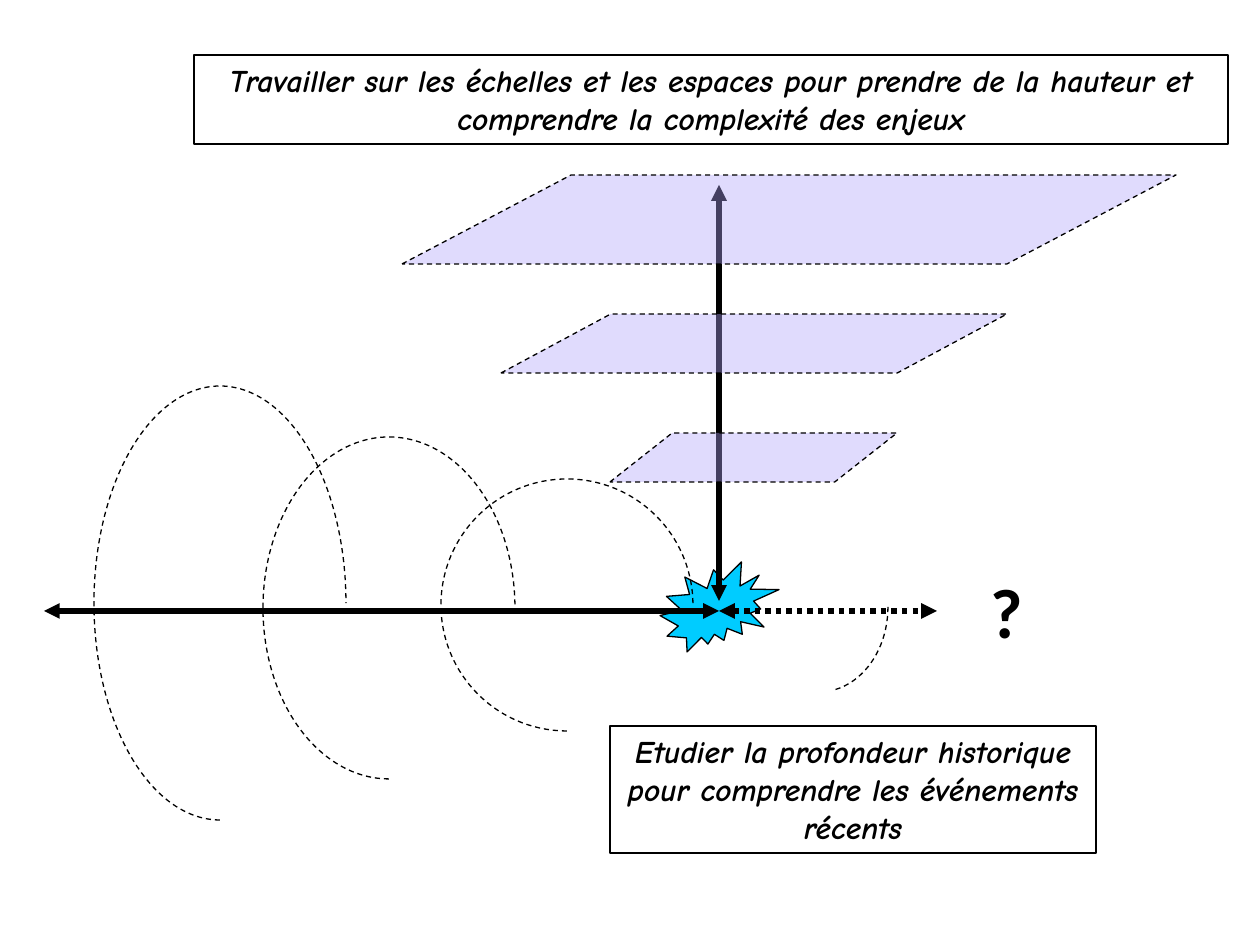
from math import atan2, cos, degrees, radians, sin

from lxml.etree import SubElement
from pptx import Presentation
from pptx.dml.color import RGBColor
from pptx.enum.dml import MSO_LINE_DASH_STYLE as Dash
from pptx.enum.shapes import MSO_CONNECTOR as Connector, MSO_SHAPE as Shape
from pptx.enum.text import MSO_AUTO_SIZE as AutoSize, PP_ALIGN as Align
from pptx.oxml.ns import qn
from pptx.util import Pt

EMU_PER_PX = 914400 / 126
COLORS = {"ink": "000000", "plane": "B0A4FA", "burst": "00CCFF"}
CAPTION_FONT = {"name": "Comic Neue", "size": Pt(18), "bold": True, "italic": True}
MARK_FONT = {"name": "Calibri", "size": Pt(40), "bold": True}


def px(*lengths):
    return [round(length * EMU_PER_PX) for length in lengths]


def color(name):
    return RGBColor.from_string(COLORS[name])


def style_line(line, width=0.75, dash=None):
    line.color.rgb = color("ink")
    line.width = Pt(width)
    if dash is not None:
        line.dash_style = dash


def add_outline(slide, kind, box, fill=None, alpha=None, dash=None, adjustments=()):
    shape = slide.shapes.add_shape(kind, *px(*box))
    shape.shadow.inherit = False
    style_line(shape.line, dash=dash)
    for index, value in enumerate(adjustments):
        shape.adjustments[index] = value
    if fill is None:
        shape.fill.background()
    else:
        shape.fill.solid()
        shape.fill.fore_color.rgb = color(fill)
    if alpha is not None:
        fill_color = shape._element.spPr.find(qn("a:solidFill"))[0]
        SubElement(fill_color, qn("a:alpha"), val=str(alpha * 1000))
    return shape


def add_arrow(slide, start, end, dash=None):
    arrow = slide.shapes.add_connector(Connector.STRAIGHT, *px(*start, *end))
    style_line(arrow.line, 3, dash)
    line = arrow.line._get_or_add_ln()
    for tag in ("a:headEnd", "a:tailEnd"):
        SubElement(line, qn(tag), type="triangle")
    SubElement(arrow._element.spPr, qn("a:effectLst"))


def add_text(slide, box, text, font, align=Align.LEFT, framed=False):
    text_box = slide.shapes.add_textbox(*px(*box))
    if framed:
        style_line(text_box.line)
    frame = text_box.text_frame
    frame.word_wrap = True
    frame.auto_size = AutoSize.SHAPE_TO_FIT_TEXT
    paragraph = frame.paragraphs[0]
    paragraph.alignment = align
    run = paragraph.add_run()
    run.text = text
    run.font.color.rgb = color("ink")
    for name, value in font.items():
        setattr(run.font, name, value)


def add_arc(slide, center, radii, start, end):
    """Angles run clockwise along the circle that is stretched to the radii."""
    (x, y), (rx, ry) = center, radii
    adjustments = []
    for angle in (start, end):
        turn = radians(angle)
        seen = degrees(atan2(ry * sin(turn), rx * cos(turn)))
        adjustments.append(seen * 0.6)  # 60000 units a degree, over 100000
    box = (x - rx, y - ry, 2 * rx, 2 * ry)
    add_outline(slide, Shape.ARC, box, dash=Dash.DASH, adjustments=adjustments)


def build_time_axis(slide, box):
    left, top, width, height = box
    axis_y = top + 218
    event_x = left + 675

    # Present event and the arrows to future and past
    add_outline(slide, Shape.EXPLOSION2, (event_x - 59, axis_y - 49, 119, 90), "burst")
    add_arrow(slide, (event_x, axis_y), (left + width, axis_y), Dash.ROUND_DOT)
    add_arrow(slide, (left, axis_y), (event_x, axis_y))

    # Waves of the past, wider with distance
    for x, y, ry in ((523, 212, 126), (345, 215, 171), (176, 210, 217)):
        add_arc(slide, (left + x, top + y), (126, ry), 90, 256.5)

    # Wave of the uncertain future
    add_arc(slide, (left + 775, top + 214), (69, 85), 270, 76.5)
    add_text(slide, (left + 934, top + 169, 49, 97), "?", MARK_FONT)


def build_scale_axis(slide, box):
    left, top, width, height = box
    axis_x = left + 317
    add_arrow(slide, (axis_x, top + 10), (axis_x, top + height))

    # Planes of scale, larger with height
    planes = (
        (0, 0, 774, 89, 1.9),
        (99, 139, 506, 59, 1.86),
        (208, 258, 287, 49, 1.27),
    )
    for x, y, plane_width, plane_height, slant in planes:
        add_outline(slide, Shape.PARALLELOGRAM,
                    (left + x, top + y, plane_width, plane_height),
                    "plane", 39, Dash.DASH, (slant,))


def build_caption(slide, box, text):
    add_text(slide, box, text, CAPTION_FONT, Align.CENTER, framed=True)


def main():
    presentation = Presentation()
    presentation.slide_width, presentation.slide_height = px(1260, 945)
    slide = presentation.slides.add_slide(presentation.slide_layouts[6])

    build_time_axis(slide, (44, 393, 893, 427))
    build_scale_axis(slide, (402, 175, 774, 426))
    build_caption(slide, (194, 55, 1034, 89),
                  "Travailler sur les échelles et les espaces pour prendre de la "
                  "hauteur et comprendre la complexité des enjeux")
    build_caption(slide, (610, 726, 486, 127),
                  "Etudier la profondeur historique pour comprendre les "
                  "événements récents")
    presentation.save("out.pptx")


if __name__ == "__main__":
    main()
